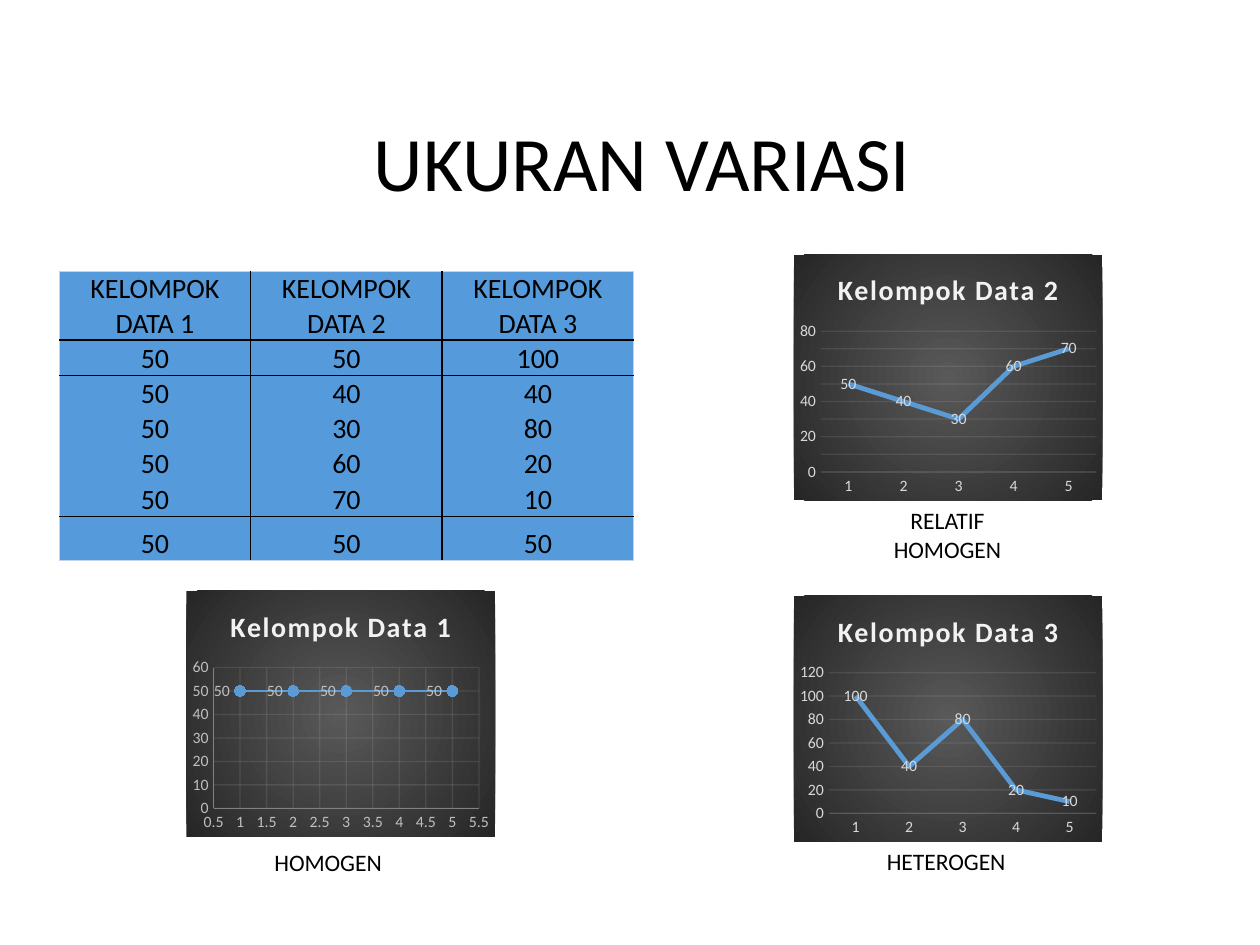
import pptx
import pptx.util
import pptx.chart.data
import pptx.chart.datalabel
import pptx.dml.color
import pptx.enum.chart
import pptx.enum.text
import pptx.oxml
import pptx.oxml.ns

Inches, Pt = pptx.util.Inches, pptx.util.Pt
kinds = pptx.enum.chart.XL_CHART_TYPE
spots = pptx.enum.chart.XL_LABEL_POSITION
aligns = pptx.enum.text.PP_ALIGN
anchors = pptx.enum.text.MSO_ANCHOR
qn = pptx.oxml.ns.qn

# Content
TITLE = "UKURAN VARIASI"
HEADS = ["KELOMPOK DATA 1", "KELOMPOK DATA 2", "KELOMPOK DATA 3"]
GROUPS = [[50, 50, 50, 50, 50], [50, 40, 30, 60, 70], [100, 40, 80, 20, 10]]
MEANS = [50, 50, 50]
CHARTS = [  # title, values, scatter, left, top
    ("Kelompok Data 1", GROUPS[0], True, 1.48, 4.69),
    ("Kelompok Data 2", GROUPS[1], False, 6.3, 2.02),
    ("Kelompok Data 3", GROUPS[2], False, 6.3, 4.73),
]
NOTES = [  # text, left, top, height, align
    ("HOMOGEN", 2.08, 6.68, 0.33, aligns.LEFT),
    ("RELATIF HOMOGEN", 6.69, 3.97, 0.56, aligns.CENTER),
    ("HETEROGEN", 6.94, 6.67, 0.33, aligns.LEFT),
]
THEME = dict(
    font="Calibri", ink="000000", cell="559BDB", edge="C4D5EB",
    line="5B9BD5", mark="559BDB", pale="F2F2F2", axis="808080",
    soft="BFBFBF", light="D9D9D9", inner="595959", outer="262626",
    title=44, table=16, note=13.5, head=16, tick=9, base=10,
)
NS = ('xmlns:a="http://schemas.openxmlformats.org/drawingml/2006/main" '
      'xmlns:c="http://schemas.openxmlformats.org/drawingml/2006/chart"')


def tint(name):
    return pptx.dml.color.RGBColor.from_string(THEME[name])


def style(font, size, color="ink", bold=False):
    font.name, font.size, font.bold = THEME["font"], Pt(THEME[size]), bold
    font.color.rgb = tint(color)


def write(frame, text, size, align):
    frame.text = text
    frame.word_wrap = True
    part = frame.paragraphs[0]
    part.alignment = align
    style(part.runs[0].font, size)


def label(slide, text, box, size, align=aligns.LEFT):
    frame = slide.shapes.add_textbox(*map(Inches, box)).text_frame
    write(frame, text, size, align)
    return frame


def border(cell, sides):
    props = cell._tc.get_or_add_tcPr()
    for spot, side in enumerate("LRTB"):
        color, width = sides[side] or (None, 0)
        fill = (f'<a:solidFill><a:srgbClr val="{THEME[color]}"/></a:solidFill>'
                if color else "<a:noFill/>")
        props.insert(spot, pptx.oxml.parse_xml(
            f'<a:ln{side} {NS} w="{int(Pt(width))}">{fill}</a:ln{side}>'))


def add_grid(slide):
    rows = [HEADS, *zip(*GROUPS), MEANS]
    tall = [0.55] + [0.28] * 5 + [0.35]
    table = slide.shapes.add_table(
        len(rows), 3, Inches(0.47), Inches(2.15), Inches(4.56),
        Inches(sum(tall))).table
    table.first_row = table.horz_banding = False
    thin, dark = ("edge", 0.5), ("ink", 1)
    # Horizontal rules, from the top edge to the bottom edge
    rules = [thin, dark, dark, None, None, None, dark, thin]
    for col in table.columns:
        col.width = Inches(1.52)
    for r, row in enumerate(rows):
        table.rows[r].height = Inches(tall[r])
        for c, value in enumerate(row):
            cell = table.cell(r, c)
            cell.margin_left = cell.margin_right = Inches(0.01)
            cell.margin_top, cell.margin_bottom = Inches(0.01), 0
            cell.vertical_anchor = anchors.BOTTOM
            write(cell.text_frame, str(value), "table", aligns.CENTER)
            cell.fill.solid()
            cell.fill.fore_color.rgb = tint("cell")
            border(cell, {"L": dark if c else thin,
                          "R": dark if c < 2 else thin,
                          "T": rules[r], "B": rules[r + 1]})


def stroke(line, color, width=0.75):
    line.color.rgb = tint(color)
    line.width = Pt(width)


def shade(chart):
    """Radial backdrop, and faint pale lines."""
    space = chart._chartSpace
    space.find(qn("c:chart")).addnext(pptx.oxml.parse_xml(
        f'<c:spPr {NS}><a:gradFill><a:gsLst>'
        f'<a:gs pos="0"><a:srgbClr val="{THEME["inner"]}"/></a:gs>'
        f'<a:gs pos="100000"><a:srgbClr val="{THEME["outer"]}"/></a:gs>'
        '</a:gsLst><a:path path="circle"><a:fillToRect l="50000" t="50000" '
        'r="50000" b="50000"/></a:path></a:gradFill>'
        '<a:ln><a:noFill/></a:ln></c:spPr>'))
    for color in space.xpath(f'.//a:ln//a:srgbClr[@val="{THEME["pale"]}"]'):
        color.append(pptx.oxml.parse_xml(f'<a:alpha {NS} val="10000"/>'))


def add_plot(slide, title, values, scatter, left, top):
    # Data
    if scatter:
        data, kind = pptx.chart.data.XyChartData(), kinds.XY_SCATTER_LINES
        points = data.add_series("Series 1")
        for x, y in enumerate(values, 1):
            points.add_data_point(x, y)
    else:
        data, kind = pptx.chart.data.CategoryChartData(), kinds.LINE
        data.categories = [str(n + 1) for n in range(len(values))]
        data.add_series("Series 1", values)
    chart = slide.shapes.add_chart(
        kind, Inches(left), Inches(top), Inches(2.45), Inches(1.95),
        data).chart
    style(chart.font, "base")
    chart.has_legend = False
    text = "soft" if scatter else "light"

    # Title
    chart.has_title = True
    frame = chart.chart_title.text_frame
    frame.text = title
    run = frame.paragraphs[0].runs[0]
    style(run.font, "head", "pale", True)
    run._r.get_or_add_rPr().set("spc", "100")

    # Axes
    across, up = chart.category_axis, chart.value_axis
    across.has_major_gridlines, up.has_major_gridlines = scatter, True
    for axis in (across, up):
        axis.major_tick_mark = pptx.enum.chart.XL_TICK_MARK.NONE
        axis.minor_tick_mark = pptx.enum.chart.XL_TICK_MARK.NONE
        style(axis.tick_labels.font, "tick", text)
        stroke(axis.format.line, "axis" if scatter else "pale")
        if axis.has_major_gridlines:
            stroke(axis.major_gridlines.format.line, "pale")
    if scatter:
        across.minimum_scale, across.maximum_scale = 0.5, 5.5
        across.major_unit = 0.5
        up.minimum_scale, up.maximum_scale, up.major_unit = 0, 60, 10
    else:
        up.format.line.fill.background()

    # Series and labels
    plot = chart.plots[0]
    plot.vary_by_categories = False
    series = plot.series[0]
    stroke(series.format.line, "line", 0.75 if scatter else 2.75)
    if scatter:
        series.marker.style = pptx.enum.chart.XL_MARKER_STYLE.CIRCLE
        series.marker.size = 6
        series.marker.format.fill.solid()
        series.marker.format.fill.fore_color.rgb = tint("mark")
        stroke(series.marker.format.line, "line")
    else:
        series.smooth = False
    labels = pptx.chart.datalabel.DataLabels(
        series._element.get_or_add_dLbls())
    labels.show_value = True
    labels.position = spots.LEFT if scatter else spots.CENTER
    style(labels.font, "tick", text)
    shade(chart)


def main():
    deck = pptx.Presentation()
    deck.slide_width, deck.slide_height = Inches(10), Inches(7.5)
    slide = deck.slides.add_slide(deck.slide_layouts[6])

    # Title
    head = label(slide, TITLE, (2.87, 0.79, 5.23, 1.06), "title")
    head.vertical_anchor = anchors.MIDDLE
    head.paragraphs[0].line_spacing = 0.9

    # Table, charts and captions
    add_grid(slide)
    for item in CHARTS:
        add_plot(slide, *item)
    for text, left, top, high, align in NOTES:
        label(slide, text, (left, top, 1.66, high), "note", align)
    deck.save("out.pptx")


if __name__ == "__main__":
    main()
